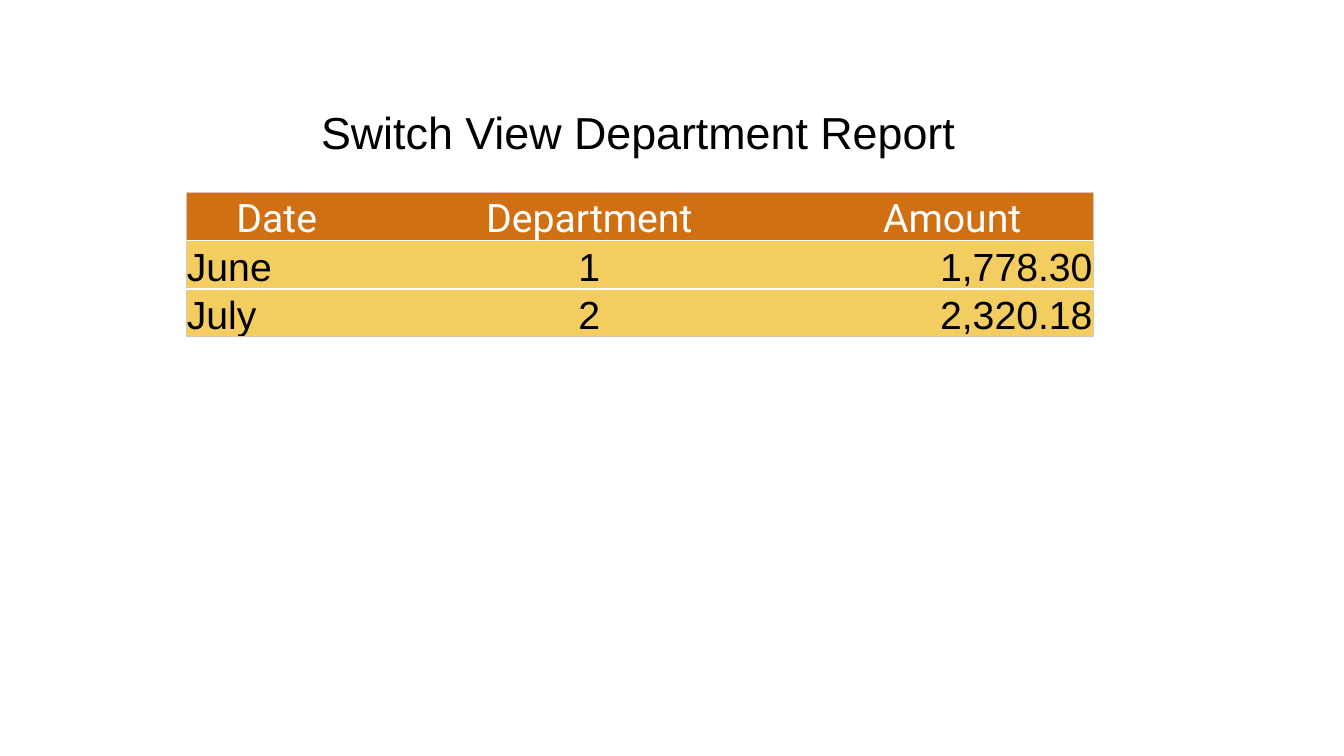
from dataclasses import dataclass

from lxml import etree
from pptx import Presentation
from pptx.dml.color import RGBColor
from pptx.enum.text import MSO_ANCHOR, PP_ALIGN
from pptx.oxml.ns import qn
from pptx.table import Table, _Cell
from pptx.text.text import _Paragraph
from pptx.util import Cm, Pt

LEFT, CENTER, RIGHT = PP_ALIGN.LEFT, PP_ALIGN.CENTER, PP_ALIGN.RIGHT
MIDDLE, BOTTOM = MSO_ANCHOR.MIDDLE, MSO_ANCHOR.BOTTOM

COLORS = {
    "header": "D17012",
    "body": "F3CD60",
    "frame": "DFC5B9",
    "white": "FFFFFF",
    "black": "000000",
}
ROW_HEIGHT = 1.21
TITLE_ONLY = 5


@dataclass
class Column:
    header: str
    values: list[str]
    width: float
    align: PP_ALIGN


@dataclass
class Border:
    color: str
    width: float


FRAME = Border("frame", 0.75)
ROW_RULE = Border("white", 1)

COLUMNS = [
    Column("Date", ["June", "July"], 4.57, LEFT),
    Column("Department", ["1", "2"], 11.18, CENTER),
    Column("Amount", ["1,778.30", "2,320.18"], 7.11, RIGHT),
]


def format_paragraph(p: _Paragraph, font: str, size: float, color: str, align: PP_ALIGN) -> None:
    p.alignment = align
    p.line_spacing = 0.9
    p.font.name = font
    p.font.size = Pt(size)
    p.font.bold = False
    p.font.color.rgb = RGBColor.from_string(COLORS[color])


def set_borders(cell: _Cell, borders: dict[str, Border | None]) -> None:
    """Draw the given sides, in the order L, R, T, B; None hides a side."""
    tc_pr = cell._tc.get_or_add_tcPr()
    for i, (side, border) in enumerate(borders.items()):
        ln = etree.Element(qn(f"a:ln{side}"))
        if border is None:
            etree.SubElement(ln, qn("a:noFill"))
        else:
            ln.set("w", str(Pt(border.width)))
            fill = etree.SubElement(ln, qn("a:solidFill"))
            etree.SubElement(fill, qn("a:srgbClr"), val=COLORS[border.color])
        tc_pr.insert(i, ln)


def fill_column(table: Table, c: int, column: Column) -> None:
    table.columns[c].width = Cm(column.width)
    last_row, last_col = len(table.rows) - 1, len(table.columns) - 1
    for r, text in enumerate([column.header, *column.values]):
        cell = table.cell(r, c)
        cell.text = text
        cell.vertical_anchor = BOTTOM
        cell.margin_left = cell.margin_right = cell.margin_top = Cm(0.02)
        cell.margin_bottom = 0
        cell.fill.solid()
        cell.fill.fore_color.rgb = RGBColor.from_string(COLORS["body" if r else "header"])
        p = cell.text_frame.paragraphs[0]
        if r == 0:
            format_paragraph(p, "Roboto", 28, "white", CENTER)
        else:
            format_paragraph(p, "Arial", 28, "black", column.align)
        set_borders(cell, {
            "L": FRAME if c == 0 else None,
            "R": FRAME if c == last_col else None,
            "T": FRAME if r == 0 else ROW_RULE,
            "B": FRAME if r == last_row else ROW_RULE,
        })


def main() -> None:
    prs = Presentation()
    prs.slide_width, prs.slide_height = Cm(33.87), Cm(19.05)
    s = prs.slides.add_slide(prs.slide_layouts[TITLE_ONLY])

    title = s.shapes.title
    title.left, title.top, title.width, title.height = Cm(7.77), Cm(2.64), Cm(16.64), Cm(1.5)
    tf = title.text_frame
    tf.text = "Switch View Department Report"
    tf.word_wrap = False
    tf.vertical_anchor = MIDDLE
    format_paragraph(tf.paragraphs[0], "Arial", 32, "black", CENTER)

    row_count = 1 + len(COLUMNS[0].values)
    width = sum(column.width for column in COLUMNS)
    table = s.shapes.add_table(
        row_count, len(COLUMNS), Cm(4.69), Cm(4.86), Cm(width), Cm(ROW_HEIGHT * row_count)
    ).table
    for row in table.rows:
        row.height = Cm(ROW_HEIGHT)
    for c, column in enumerate(COLUMNS):
        fill_column(table, c, column)

    prs.save("out.pptx")


if __name__ == "__main__":
    main()
